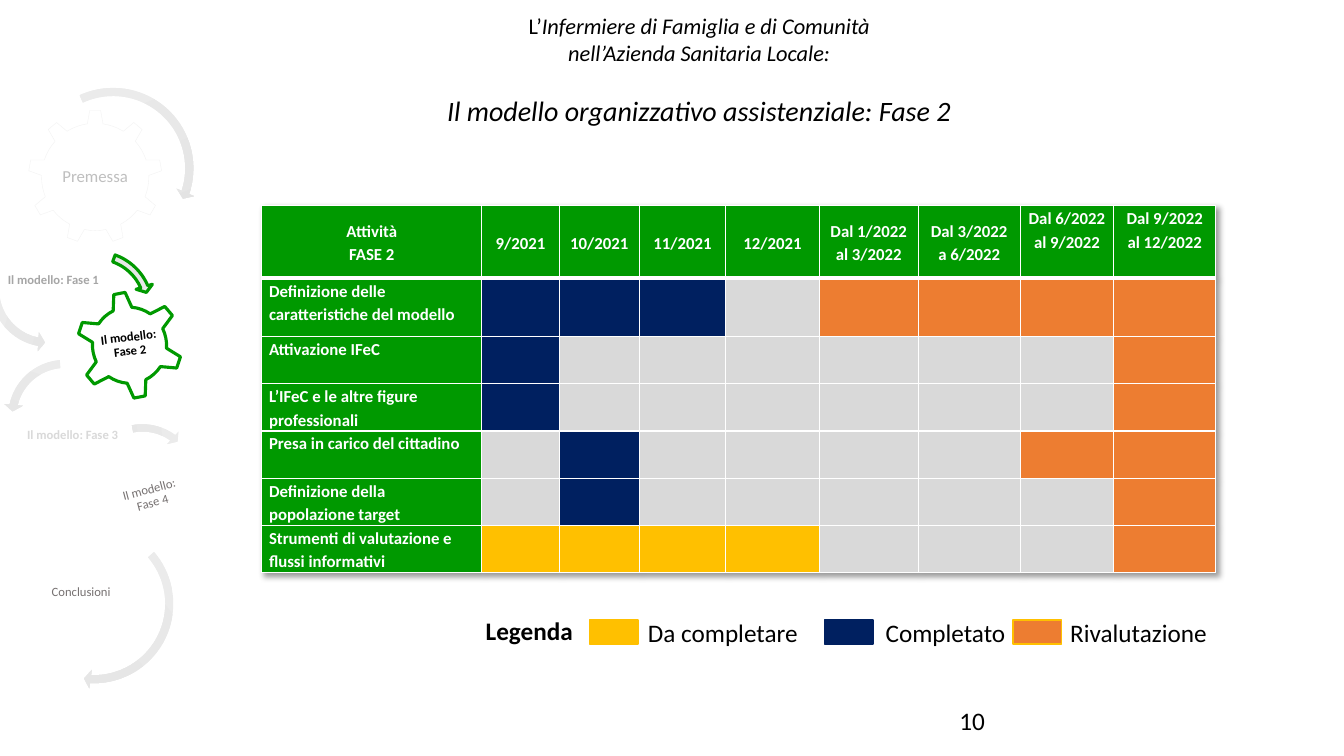
from lxml import etree
from pptx import Presentation, util as u
from pptx.dml.color import RGBColor
from pptx.enum import shapes, text
from pptx.oxml.ns import qn

Cm = u.Cm
SHAPE = shapes.MSO_SHAPE
CENTER = text.PP_ALIGN.CENTER
MIDDLE = text.MSO_ANCHOR.MIDDLE
TOP = text.MSO_ANCHOR.TOP

WHITE = RGBColor(0xFF, 0xFF, 0xFF)
BLACK = RGBColor(0, 0, 0)
GREEN = RGBColor(0x00, 0x99, 0x00)
NAVY = RGBColor(0x00, 0x20, 0x60)
ORANGE = RGBColor(0xED, 0x7D, 0x31)
YELLOW = RGBColor(0xFF, 0xC0, 0x00)
CELL_GREY = RGBColor(0xD9, 0xD9, 0xD9)
GEAR_GREY = RGBColor(0xF2, 0xF2, 0xF2)
ARROW_LIGHT = RGBColor(0xED, 0xED, 0xED)
ARROW_DARK = RGBColor(0xE1, 0xE1, 0xE1)
PREMESSA_GREY = RGBColor(0xBF, 0xBF, 0xBF)
PHASE_1_GREY = RGBColor(0xA6, 0xA6, 0xA6)
TEXT_GREY = RGBColor(0x76, 0x71, 0x71)

BIG_ARROW = (SHAPE.CIRCULAR_ARROW, (0.047, 2.99, 24.36, 160.46, 0.055))
LEFT_ARROW = (SHAPE.LEFT_CIRCULAR_ARROW, (0.065, 4.3, 104.89, 148.38, 0.075))
SMALL_ARROW = (SHAPE.CIRCULAR_ARROW, (0.06, 3.94, 133.14, 105.08, 0.07))

GEARS = [
    (SHAPE.GEAR_9, 0.71, 0.77, 3.38, 3.38, 0, None, GEAR_GREY, 0.25),
    (SHAPE.GEAR_6, 1.93, 5.34, 2.67, 2.72, 349, WHITE, GREEN, 2.25),
    (SHAPE.GEAR_9, 0.38, 11.26, 3.33, 3.33, 0, WHITE, None, 0),
    (SHAPE.GEAR_6, 0.51, 7.63, 2.64, 2.67, 0, WHITE, None, 0),
    (SHAPE.GEAR_6, 2.51, 9.15, 2.64, 2.69, 345, WHITE, None, 0),
]
GEAR_LABELS = [
    ("Premessa", 0.71, 0.77, 3.38, 3.38, 0, 12, PREMESSA_GREY, False),
    ("Il modello: Fase 1", 0, 3.72, 2.69, 2.69, 0, 9, PHASE_1_GREY, True),
    ("Il modello: Fase 2", 2.51, 5.92, 1.5, 1.52, 353, 9, BLACK, True),
    ("Il modello: Fase 3", 0.51, 7.63, 2.64, 2.67, 0, 9, CELL_GREY, True),
    ("Il modello: Fase 4", 3.07, 9.76, 1.47, 1.5, 345, 9, TEXT_GREY, False),
    ("Conclusioni", 0.38, 11.26, 3.33, 3.33, 0, 9, TEXT_GREY, False),
]
ARROWS = [
    (BIG_ARROW, 0.69, 0.08, 4.32, 337.9, None),
    (LEFT_ARROW, -0.36, 3.72, 3.15, 285.8, None),
    (SMALL_ARROW, 0.89, 4.22, 3.07, 114.5, GREEN),
    (BIG_ARROW, 0.23, 11.08, 4.27, 51.9, None),
    (LEFT_ARROW, 0.08, 6.94, 3.1, 17.7, None),
    (SMALL_ARROW, 2.06, 8.57, 3.05, 84.1, None),
]

COLUMN_WIDTHS = [5.54, 1.96, 2.01, 2.18, 2.36, 2.49, 2.57, 2.36, 2.57]
ROW_HEIGHTS = [1.83, 1.47] + [1.19] * 5
HEADERS = ["Attività\nFASE 2", "9/2021", "10/2021", "11/2021", "12/2021",
           "Dal 1/2022 al 3/2022", "Dal 3/2022 a 6/2022",
           "Dal 6/2022 al 9/2022", "Dal 9/2022 al 12/2022"]
STATES = {"C": NAVY, "R": ORANGE, "D": YELLOW, "-": CELL_GREY}
ACTIVITIES = [
    ("Definizione delle caratteristiche del modello", "CCC-RRRR"),
    ("Attivazione IFeC", "C------R"),
    ("L’IFeC e le altre figure professionali", "C------R"),
    ("Presa in carico del cittadino", "-C----RR"),
    ("Definizione della popolazione target", "-C-----R"),
    ("Strumenti di valutazione e flussi informativi", "DDDD---R"),
]
LEGEND = [
    ("Da completare", 2.87, 4.09, 4.7, YELLOW, YELLOW),
    ("Completato", 8.79, 10.08, 3.76, NAVY, NAVY),
    ("Rivalutazione", 13.54, 14.73, 5, ORANGE, YELLOW),
]


def set_font(paragraph, size, color, bold=False, italic=False):
    font = paragraph.font
    font.name, font.size, font.bold, font.italic = "Calibri", u.Pt(size), bold, italic
    font.color.rgb = color


def add_preset(slide, kind, left, top, width, height, fill, line, weight):
    shape = slide.shapes.add_shape(kind, Cm(left), Cm(top), Cm(width), Cm(height))
    shape.shadow.inherit = False
    if fill is None:
        shape.fill.background()
    else:
        shape.fill.solid()
        shape.fill.fore_color.rgb = fill
    if line is None:
        shape.line.fill.background()
    else:
        shape.line.color.rgb = line
        shape.line.width = u.Pt(weight)
    return shape


def add_label(slide, words, left, top, width, height, size=18, color=BLACK, bold=False):
    box = slide.shapes.add_textbox(Cm(left), Cm(top), Cm(width), Cm(height))
    box.text_frame.word_wrap = True
    box.text_frame.text = words
    set_font(box.text_frame.paragraphs[0], size, color, bold)
    return box


def add_gear_chain(slide, left, top):
    for kind, x, y, width, height, rotation, fill, line, weight in GEARS:
        gear = add_preset(slide, kind, left + x, top + y, width, height, fill, line, weight)
        gear.rotation = rotation
    for words, x, y, width, height, rotation, size, color, bold in GEAR_LABELS:
        label = add_label(slide, words, left + x, top + y, width, height, size, color, bold)
        label.rotation = rotation
        frame = label.text_frame
        frame.vertical_anchor = MIDDLE
        frame.margin_left = frame.margin_right = Cm(0.03)
        frame.margin_top = frame.margin_bottom = Cm(0.03)
        frame.paragraphs[0].alignment = CENTER
        frame.paragraphs[0].line_spacing = 0.9
    for (kind, adjustments), x, y, side, rotation, line in ARROWS:
        arrow = add_preset(slide, kind, left + x, top + y, side, side, None, line, 2.25)
        arrow.rotation = rotation
        for index, value in enumerate(adjustments):
            arrow.adjustments[index] = value
        arrow.fill.gradient()
        arrow.fill.gradient_angle = 270
        for stop, color in zip(arrow.fill.gradient_stops, (ARROW_LIGHT, ARROW_DARK)):
            stop.color.rgb = color


def add_title(slide, left, top, width, height):
    box = slide.shapes.add_textbox(Cm(left), Cm(top), Cm(width), Cm(height))
    frame = box.text_frame
    frame.word_wrap = True
    lines = [("Infermiere di Famiglia e di Comunità", 16),
             ("nell’Azienda Sanitaria Locale:", 16),
             ("Il modello organizzativo assistenziale: Fase 2", 20)]
    for index, (words, size) in enumerate(lines):
        paragraph = frame.add_paragraph() if index else frame.paragraphs[0]
        paragraph.alignment = CENTER
        set_font(paragraph, size, BLACK, italic=True)
        if index == 0:
            article = paragraph.add_run()
            article.text = "L’"
            article.font.italic = False
        paragraph.add_run().text = words
    paragraph.space_before = u.Pt(19.5)


def set_borders(cell, weights):
    properties = cell._tc.get_or_add_tcPr()
    for index, (side, weight) in enumerate(weights.items()):
        line = etree.Element(qn("a:ln" + side), w=str(u.Pt(weight)))
        fill = etree.SubElement(line, qn("a:solidFill"))
        etree.SubElement(fill, qn("a:srgbClr"), val=str(WHITE))
        properties.insert(index, line)


def add_table_shadow(table):
    effects = etree.Element(qn("a:effectLst"))
    shadow = etree.SubElement(effects, qn("a:outerShdw"), blurRad="50800",
                              dist="38100", dir="2700000", algn="tl", rotWithShape="0")
    color = etree.SubElement(shadow, qn("a:prstClr"), val="black")
    etree.SubElement(color, qn("a:alpha"), val="40000")
    table._tbl.tblPr.insert(0, effects)


def fill_cell(cell, words, color, row):
    cell.fill.solid()
    cell.fill.fore_color.rgb = color
    set_borders(cell, {"L": 1, "R": 1, "T": 3 if row == 1 else 1, "B": 3 if row == 0 else 1})
    if not words:
        return
    cell.margin_left = cell.margin_right = Cm(0.18)
    cell.margin_top = cell.margin_bottom = 0
    cell.text = words
    for paragraph in cell.text_frame.paragraphs:
        set_font(paragraph, 12, WHITE, bold=True)
        paragraph.line_spacing = 1.15
        if row == 0:
            paragraph.alignment = CENTER


def add_schedule(slide, left, top):
    frame = slide.shapes.add_table(len(ROW_HEIGHTS), len(COLUMN_WIDTHS), Cm(left), Cm(top),
                                   Cm(sum(COLUMN_WIDTHS)), Cm(sum(ROW_HEIGHTS)))
    table = frame.table
    for column, width in zip(table.columns, COLUMN_WIDTHS):
        column.width = Cm(width)
    for row, height in zip(table.rows, ROW_HEIGHTS):
        row.height = Cm(height)
    for column, words in enumerate(HEADERS):
        cell = table.cell(0, column)
        fill_cell(cell, words, GREEN, 0)
        cell.vertical_anchor = MIDDLE if column < 7 else TOP
    for row, (activity, states) in enumerate(ACTIVITIES, 1):
        fill_cell(table.cell(row, 0), activity, GREEN, row)
        for column, state in enumerate(states, 1):
            fill_cell(table.cell(row, column), "", STATES[state], row)
    add_table_shadow(table)


def add_legend(slide, left, top):
    add_label(slide, "Legenda", left, top, 3.76, 1.02, bold=True)
    for words, swatch_x, label_x, width, fill, line in LEGEND:
        add_preset(slide, SHAPE.RECTANGLE, left + swatch_x, top + 0.23, 1.22, 0.61, fill, line, 1)
        add_label(slide, words, left + label_x, top + 0.03, width, 1.02)


def main():
    presentation = Presentation()
    presentation.slide_width, presentation.slide_height = Cm(33.87), Cm(19.05)
    slide = presentation.slides.add_slide(presentation.slide_layouts[6])
    add_gear_chain(slide, 0, 2)
    add_title(slide, 6.15, 0.18, 22.94, 3.18)
    add_schedule(slide, 6.6, 5.18)
    add_legend(slide, 11.99, 15.39)
    add_label(slide, "10", 23.93, 17.65, 7.62, 1.02)
    presentation.save("out.pptx")


if __name__ == "__main__":
    main()
